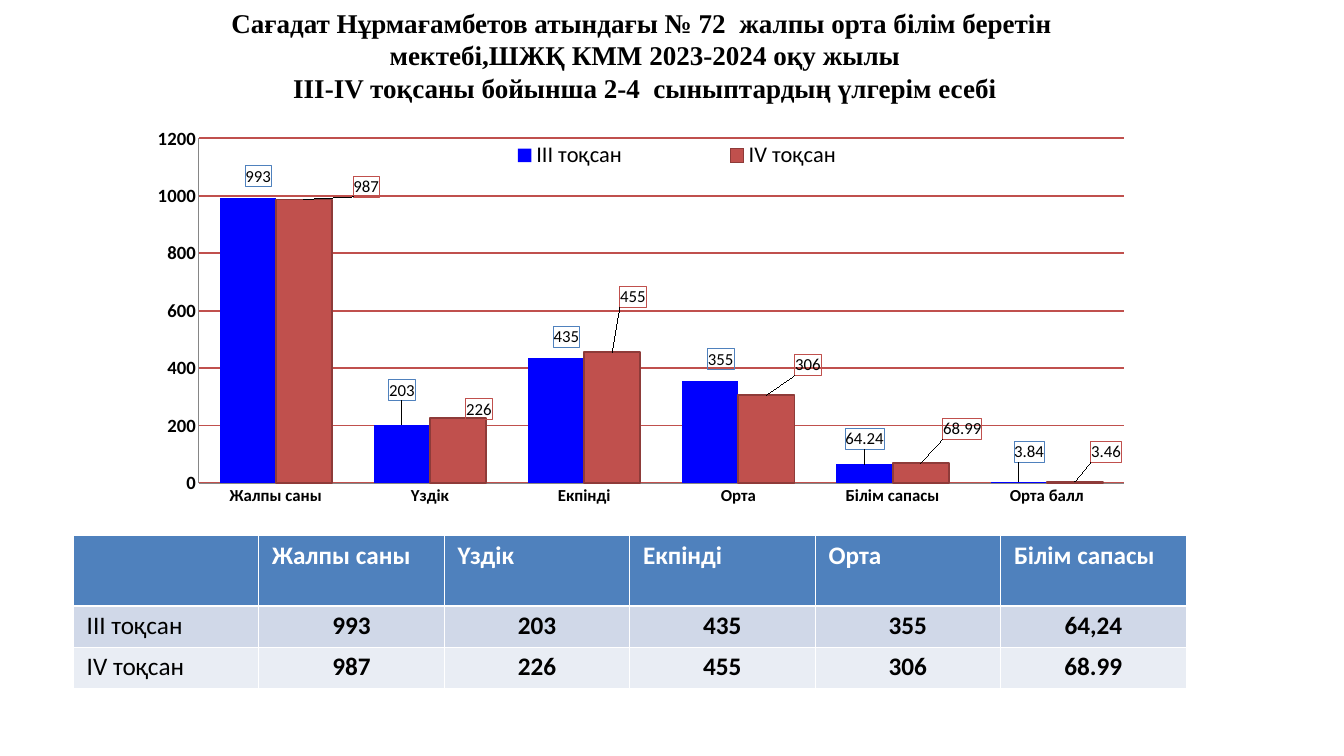
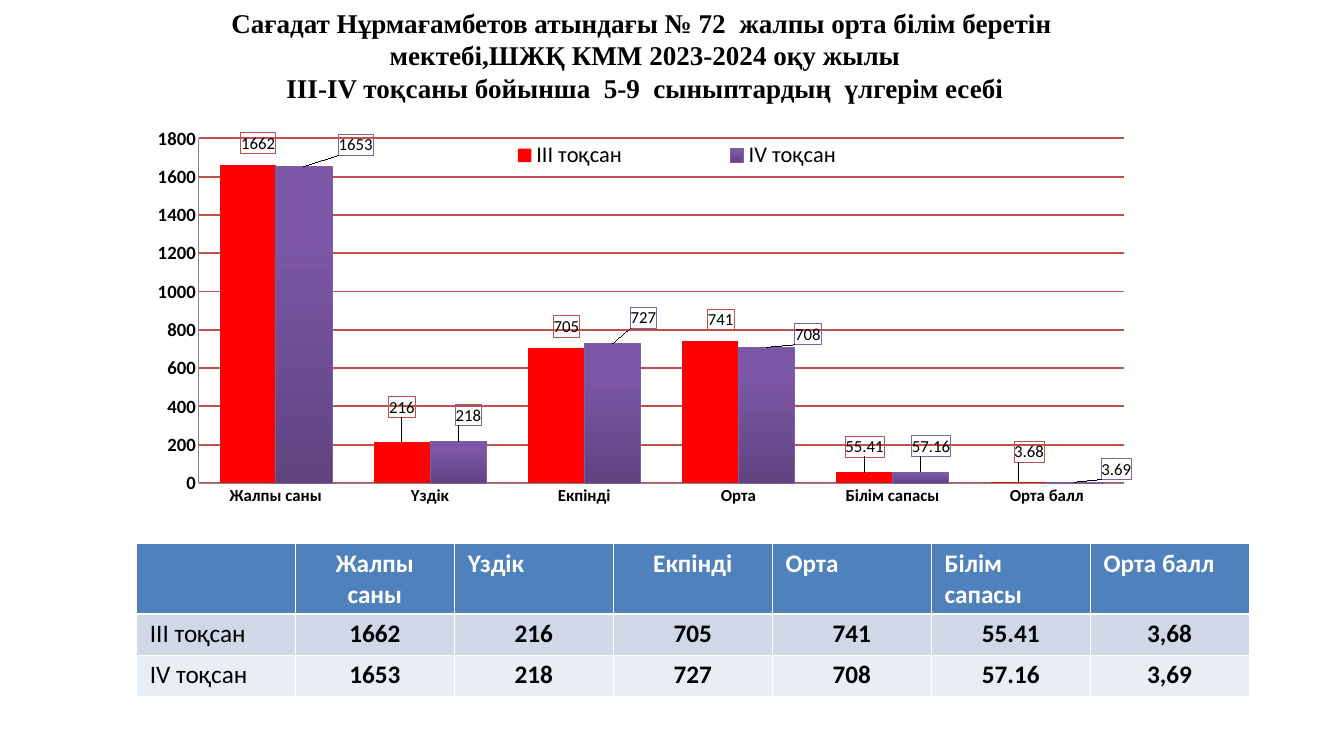
from dataclasses import dataclass

from pptx import Presentation
from pptx import util as u
from pptx.chart import data as chart_data
from pptx.dml import color
from pptx.enum import chart as chart_enum
from pptx.enum import text as text_enum
from pptx.oxml import parse_xml
from pptx.oxml.ns import nsdecls, qn


@dataclass(frozen=True)
class Theme:
    body_font: str = "Calibri"
    title_font: str = "Times New Roman"
    black: str = "000000"
    white: str = "FFFFFF"
    header: str = "4F81BD"
    bands: tuple[str, str] = ("D0D8E8", "E9EDF4")
    grid: str = "C0504D"
    axis: str = "868686"
    title_size: int = 29
    table_size: int = 27
    legend_size: int = 24
    value_size: int = 20
    label_size: int = 18


THEME = Theme()
SUBJECTS = ("Жалпы саны", "Үздік", "Екпінді", "Орта", "Білім сапасы", "Орта балл")
TITLE_LINES = (
    "Сағадат Нұрмағамбетов атындағы № 72  жалпы орта білім беретін ",
    "мектебі,ШЖҚ КММ 2023-2024 оқу жылы",
)
FIRST_OFFSETS = ((0.01, -0.02), (0, -0.05), (0.01, -0.02), (0.01, -0.02), (0, -0.03), (0.01, -0.04))
TABLE_WIDTH = 16.56
ROW_HEIGHTS = (1.05, 0.61, 0.61)


@dataclass(frozen=True)
class Quarter:
    series_name: str
    row_name: str
    values: tuple[str, ...]
    fill: tuple[str, ...]
    label_line: str
    offsets: tuple[tuple[float, float], ...]
    line: str | None = None
    line_width: float = 0.75


@dataclass(frozen=True)
class Report:
    last_line: str
    quarters: tuple[Quarter, Quarter]
    axis_maximum: int
    table_left: float
    table_top: float
    table_columns: int
    centred_headers: tuple[int, ...] = ()


REPORTS = (
    Report(
        "ІIІ-ІV тоқсаны бойынша 2-4  сыныптардың үлгерім есебі",
        (
            Quarter("IІІ тоқсан", "ІII тоқсан", ("993", "203", "435", "355", "64,24", "3,84"),
                    ("0000FF",), "4F81BD", FIRST_OFFSETS),
            Quarter("ІV тоқсан", "IV тоқсан", ("987", "226", "455", "306", "68.99", "3.46"),
                    ("C0504D",), "C0504D",
                    ((0.06, 0), (0.02, 0.01), (0.02, -0.1), (0.04, -0.04), (0.04, -0.05), (0.03, -0.04)),
                    "8E3B39", 2),
        ),
        1200, 1.09, 7.97, 5,
    ),
    Report(
        "ІIІ-ІV тоқсаны бойынша  5-9  сыныптардың  үлгерім есебі",
        (
            Quarter("ІІI тоқсан", "III тоқсан", ("1662", "216", "705", "741", "55.41", "3,68"),
                    ("FF0000",), "C0504D", FIRST_OFFSETS),
            Quarter("ІV тоқсан", "IV тоқсан", ("1653", "218", "727", "708", "57.16", "3,69"),
                    ("5F4480", "7C57A8"), "8064A2",
                    ((0.05, -0.02), (0.01, -0.03), (0.03, -0.03), (0.04, 0), (0.01, -0.03), (0.04, 0)),
                    "7D60A0"),
        ),
        1800, 2.03, 8.09, 6, (1, 3),
    ),
)


def rgb(value: str) -> color.RGBColor:
    return color.RGBColor.from_string(value)


def style_font(font, size: float, bold: bool = False, ink: str = THEME.black,
               face: str = THEME.body_font) -> None:
    font.size, font.bold, font.name = u.Pt(size), bold, face
    font.color.rgb = rgb(ink)


def write_text(paragraph, words: str, centred: bool = False, **font_format) -> None:
    paragraph.alignment = text_enum.PP_ALIGN.CENTER if centred else text_enum.PP_ALIGN.LEFT
    run = paragraph.add_run()
    run.text = words
    style_font(run.font, **font_format)


def set_margins(target, horizontal: float, vertical: float) -> None:
    target.margin_left = target.margin_right = u.Inches(horizontal)
    target.margin_top = target.margin_bottom = u.Inches(vertical)


def manual_layout(x: float, y: float, size: tuple[float, float] | None = None, inner: bool = False):
    target = '<c:layoutTarget val="inner"/>' if inner else ""
    modes = '<c:xMode val="edge"/><c:yMode val="edge"/>' if size else ""
    extent = f'<c:w val="{size[0]}"/><c:h val="{size[1]}"/>' if size else ""
    return parse_xml(
        f'<c:layout {nsdecls("c")}><c:manualLayout>{target}{modes}'
        f'<c:x val="{x}"/><c:y val="{y}"/>{extent}</c:manualLayout></c:layout>'
    )


def remove_layout(element) -> None:
    for layout in element.findall(qn("c:layout")):
        element.remove(layout)


def add_title(slide, last_line: str) -> None:
    box = slide.shapes.add_textbox(u.Inches(0.94), 0, u.Inches(17.32), u.Inches(1.64))
    frame = box.text_frame
    frame.word_wrap = True
    frame.auto_size = text_enum.MSO_AUTO_SIZE.SHAPE_TO_FIT_TEXT
    set_margins(frame, 0.18, 0.09)
    for index, line in enumerate((*TITLE_LINES, last_line)):
        paragraph = frame.add_paragraph() if index else frame.paragraphs[0]
        write_text(paragraph, line, centred=True, size=THEME.title_size, bold=True, face=THEME.title_font)


def style_series(series, quarter: Quarter) -> None:
    fill = series.format.fill
    if len(quarter.fill) == 1:
        fill.solid()
        fill.fore_color.rgb = rgb(quarter.fill[0])
    else:
        fill.gradient()
        fill.gradient_angle = 90
        for stop, ink, position in zip(fill.gradient_stops, quarter.fill, (0, 0.8)):
            stop.color.rgb, stop.position = rgb(ink), position
    if quarter.line:
        series.format.line.color.rgb = rgb(quarter.line)
        series.format.line.width = u.Pt(quarter.line_width)
    else:
        series.format.line.fill.background()
    series.invert_if_negative = False
    series.data_labels.show_value = True
    style_font(series.data_labels.font, THEME.label_size)
    for index in range(len(SUBJECTS)):
        label = series.points[index].data_label
        label.position = chart_enum.XL_LABEL_POSITION.OUTSIDE_END
        style_font(label.font, THEME.label_size)
    for element, offset in zip(series._element.findall(f'.//{qn("c:dLbl")}'), quarter.offsets):
        for old in element.findall(qn("c:spPr")):
            element.remove(old)
        layout = manual_layout(*offset)
        element.find(qn("c:idx")).addnext(layout)
        layout.addnext(parse_xml(
            f'<c:spPr {nsdecls("c", "a")}><a:noFill/><a:ln w="9525"><a:solidFill>'
            f'<a:srgbClr val="{quarter.label_line}"/></a:solidFill></a:ln></c:spPr>'
        ))


def style_axes(chart, maximum: int) -> None:
    value_axis, category_axis = chart.value_axis, chart.category_axis
    value_axis.minimum_scale, value_axis.maximum_scale, value_axis.major_unit = 0, maximum, 200
    value_axis.has_major_gridlines = True
    value_axis.major_gridlines.format.line.color.rgb = rgb(THEME.grid)
    value_axis.major_gridlines.format.line.width = u.Pt(2)
    for axis, size in ((value_axis, THEME.value_size), (category_axis, THEME.label_size)):
        axis.major_tick_mark = axis.minor_tick_mark = chart_enum.XL_TICK_MARK.NONE
        axis.format.line.color.rgb = rgb(THEME.axis)
        axis.format.line.width = u.Pt(0.75)
        style_font(axis.tick_labels.font, size, bold=True)


def add_results_chart(slide, report: Report) -> None:
    data = chart_data.CategoryChartData()
    data.categories = SUBJECTS
    for quarter in report.quarters:
        data.add_series(quarter.series_name, [float(value.replace(",", ".")) for value in quarter.values])
    chart = slide.shapes.add_chart(
        chart_enum.XL_CHART_TYPE.COLUMN_CLUSTERED,
        u.Inches(1.41), u.Inches(1.87), u.Inches(15.47), u.Inches(6.33), data,
    ).chart
    chart.has_title = False
    style_font(chart.font, THEME.label_size)
    plot = chart.plots[0]
    plot.gap_width, plot.overlap, plot.vary_by_categories = 75, 0, False
    for series, quarter in zip(plot.series, report.quarters):
        style_series(series, quarter)
    style_axes(chart, report.axis_maximum)

    chart.has_legend = True
    chart.legend.position = chart_enum.XL_LEGEND_POSITION.BOTTOM
    chart.legend.include_in_layout = True
    style_font(chart.legend.font, THEME.legend_size)
    legend = chart.legend._element
    remove_layout(legend)
    legend.find(qn("c:legendPos")).addnext(manual_layout(0.31, 0.03, (0.5, 0.08)))

    plot_area = plot._element.getparent()
    remove_layout(plot_area)
    plot_area.insert(0, manual_layout(0.1, 0.03, (0.89, 0.81), inner=True))


def fill_cell(cell, words: str, fill: str, bottom: float = 1, **text_format) -> None:
    set_margins(cell, 0.2, 0.07)
    properties = cell._tc.get_or_add_tcPr()
    for side, width in (("L", 1), ("R", 1), ("T", 1), ("B", bottom)):
        properties.append(parse_xml(
            f'<a:ln{side} {nsdecls("a")} w="{u.Pt(width)}"><a:solidFill>'
            f'<a:srgbClr val="{THEME.white}"/></a:solidFill></a:ln{side}>'
        ))
    cell.fill.solid()
    cell.fill.fore_color.rgb = rgb(fill)
    if words:
        write_text(cell.text_frame.paragraphs[0], words, size=THEME.table_size, **text_format)


def add_results_table(slide, report: Report) -> None:
    count = report.table_columns
    table = slide.shapes.add_table(
        len(ROW_HEIGHTS), count + 1, u.Inches(report.table_left), u.Inches(report.table_top),
        u.Inches(TABLE_WIDTH), u.Inches(sum(ROW_HEIGHTS)),
    ).table
    for row, height in zip(table.rows, ROW_HEIGHTS):
        row.height = u.Inches(height)
    for column in table.columns:
        column.width = u.Inches(TABLE_WIDTH / (count + 1))
    for index, words in enumerate(("", *SUBJECTS[:count])):
        fill_cell(table.cell(0, index), words, THEME.header, bottom=3, bold=True, ink=THEME.white,
                  centred=index in report.centred_headers)
    for row_index, (quarter, band) in enumerate(zip(report.quarters, THEME.bands), start=1):
        for index, words in enumerate((quarter.row_name, *quarter.values[:count])):
            fill_cell(table.cell(row_index, index), words, band, bold=index > 0, centred=index > 0)


def main() -> None:
    presentation = Presentation()
    presentation.slide_width, presentation.slide_height = u.Inches(20), u.Inches(11.25)
    for report in REPORTS:
        slide = presentation.slides.add_slide(presentation.slide_layouts[6])
        add_results_chart(slide, report)
        add_title(slide, report.last_line)
        add_results_table(slide, report)
    presentation.save("out.pptx")


if __name__ == "__main__":
    main()
